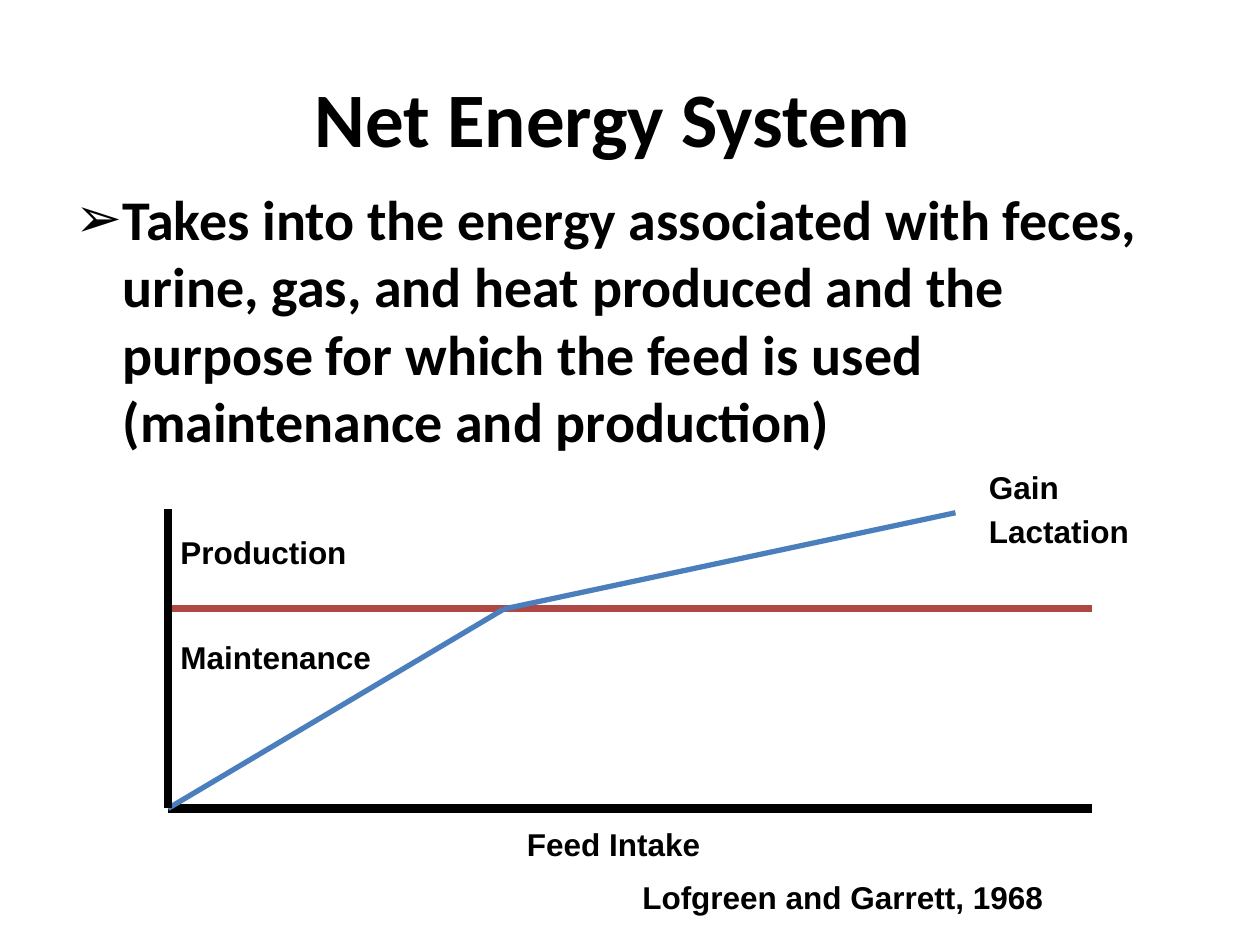
from lxml import etree
from pptx import Presentation
from pptx.dml.color import RGBColor
from pptx.enum.shapes import MSO_CONNECTOR
from pptx.enum.text import MSO_ANCHOR, MSO_AUTO_SIZE, PP_ALIGN
from pptx.oxml.ns import qn
from pptx.util import Pt

STRAIGHT = MSO_CONNECTOR.STRAIGHT
TOP, MIDDLE = MSO_ANCHOR.TOP, MSO_ANCHOR.MIDDLE
LEFT, CENTER = PP_ALIGN.LEFT, PP_ALIGN.CENTER
FIT_SHAPE = MSO_AUTO_SIZE.SHAPE_TO_FIT_TEXT

COLORS = {"black": "000000", "threshold": "AE4845", "response": "4B7EBC"}

# Graph geometry
X0, X_KINK, X_PEAK, X1 = 96, 288, 546, 624
Y_TOP, Y_PEAK, Y_MAINT, Y0 = 291, 293, 348, 462


def rgb(name):
    return RGBColor.from_string(COLORS[name])


def add_text(slide, text, x, y, w, h, size=18, font="Arial",
             align=LEFT, anchor=TOP):
    sp = slide.shapes.add_textbox(Pt(x), Pt(y), Pt(w), Pt(h))
    tf = sp.text_frame
    tf.word_wrap = True
    tf.vertical_anchor = anchor
    p = tf.paragraphs[0]
    p.alignment = align
    r = p.add_run()
    r.text = text
    r.font.name = font
    r.font.size = Pt(size)
    r.font.bold = True
    r.font.color.rgb = rgb("black")
    return sp


def add_label(slide, text, x, y, w):
    sp = add_text(slide, text, x, y, w, 29)
    sp.text_frame.auto_size = FIT_SHAPE


def add_bullet(p, char, indent):
    pPr = p._p.get_or_add_pPr()
    pPr.set("marL", str(Pt(indent)))
    pPr.set("indent", str(-Pt(indent)))
    etree.SubElement(pPr, qn("a:buFont")).set("typeface", "Arial")
    etree.SubElement(pPr, qn("a:buChar")).set("char", char)


def add_line(slide, start, end, color, width):
    line = slide.shapes.add_connector(
        STRAIGHT, *(Pt(v) for v in (*start, *end)))
    line.line.color.rgb = rgb(color)
    line.line.width = Pt(width)
    etree.SubElement(line._element.spPr, qn("a:effectLst"))


def main():
    prs = Presentation()
    prs.slide_width, prs.slide_height = Pt(720), Pt(540)
    slide = prs.slides.add_slide(prs.slide_layouts[6])

    # Title, centred a little left of the middle
    title = add_text(slide, "Net Energy System", 36, 21.6, 648, 90,
                     44, "Calibri", CENTER, MIDDLE)
    title.text_frame.margin_right = Pt(27)

    # Statement
    body = add_text(
        slide,
        "Takes into the energy associated with feces, urine, gas, and heat "
        "produced and the purpose for which the feed is used "
        "(maintenance and production)",
        36, 102, 648, 356, 32, "Calibri")
    add_bullet(body.text_frame.paragraphs[0], "➢", 27)

    # Axes, maintenance level and response to intake
    origin, kink = (X0, Y0), (X_KINK, Y_MAINT)
    for start, end, color, width in [
        (origin, (X1, Y0), "black", 5),
        ((X0, Y_MAINT), (X1, Y_MAINT), "threshold", 4),
        (origin, kink, "response", 3),
        (kink, (X_PEAK, Y_PEAK), "response", 3),
        (origin, (X0, Y_TOP), "black", 5),
    ]:
        add_line(slide, start, end, color, width)

    # Graph labels and citation
    for text, x, y, w in [
        ("Feed Intake", 294, 468, 126),
        ("Maintenance", X0, 361, 132),
        ("Production", X0, 301, 132),
        ("Gain", 558, 264, 132),
        ("Lactation", 558, 289, 132),
        ("Lofgreen and Garrett, 1968", 360, 498, 246),
    ]:
        add_label(slide, text, x, y, w)

    prs.save("out.pptx")


if __name__ == "__main__":
    main()
